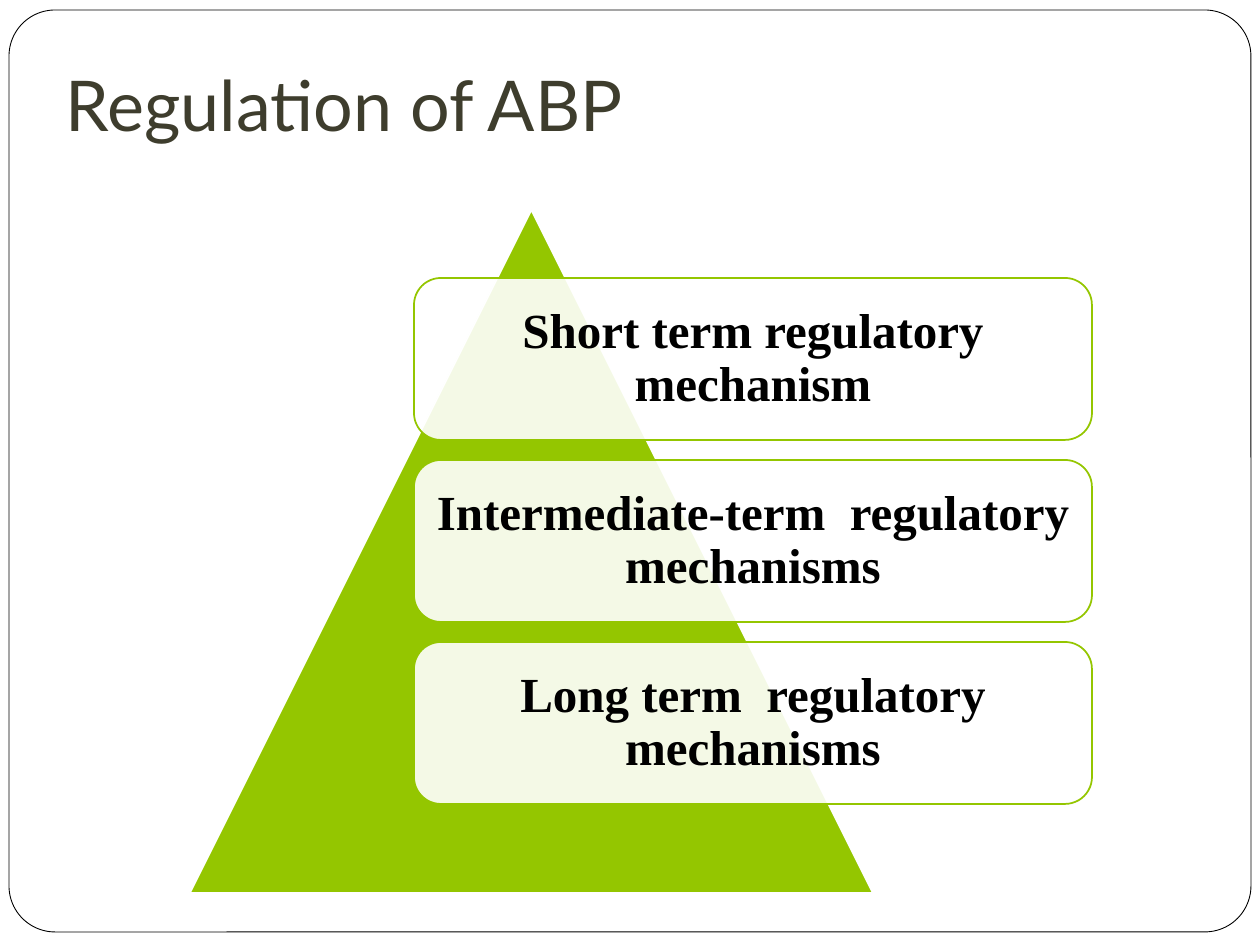
from lxml import etree
from pptx import Presentation
from pptx.dml.color import RGBColor
from pptx.enum.shapes import MSO_SHAPE
from pptx.enum.text import MSO_ANCHOR, PP_ALIGN
from pptx.oxml.ns import qn
from pptx.util import Pt

ROUNDED = MSO_SHAPE.ROUNDED_RECTANGLE
TRIANGLE = MSO_SHAPE.ISOSCELES_TRIANGLE
MIDDLE, BOTTOM = MSO_ANCHOR.MIDDLE, MSO_ANCHOR.BOTTOM
LEFT, CENTER = PP_ALIGN.LEFT, PP_ALIGN.CENTER

PX = 914400 / 126
COLORS = {"white": "FFFFFF", "black": "000000", "green": "94C600", "title": "3E3D2D"}
MECHANISMS = [
    "Short term regulatory mechanism",
    "Intermediate-term  regulatory mechanisms",
    "Long term  regulatory mechanisms",
]
CARD_TOP, CARD_PITCH = 278, 182


def add_outlined(kind, box, fill, line, weight):
    shape = slide.shapes.add_shape(kind, *(round(v * PX) for v in box))
    shape.shadow.inherit = False
    shape.fill.solid()
    shape.fill.fore_color.rgb = RGBColor.from_string(COLORS[fill])
    shape.line.color.rgb = RGBColor.from_string(COLORS[line])
    shape.line.width = Pt(weight)
    return shape


def write(shape, text, insets, anchor, align, font_name, size, color, bold):
    """Fill the shape with one paragraph; insets are left, top, right, bottom px."""
    frame = shape.text_frame
    frame.word_wrap = True
    frame.vertical_anchor = anchor
    (frame.margin_left, frame.margin_top,
     frame.margin_right, frame.margin_bottom) = (round(v * PX) for v in insets)
    paragraph = frame.paragraphs[0]
    paragraph.alignment = align
    run = paragraph.add_run()
    run.text = text
    run.font.name = font_name
    run.font.size = Pt(size)
    run.font.bold = bold
    run.font.color.rgb = RGBColor.from_string(COLORS[color])
    return paragraph


prs = Presentation()
prs.slide_width = round(1260 * PX)
prs.slide_height = round(945 * PX)
slide = prs.slides.add_slide(prs.slide_layouts[6])

border = add_outlined(ROUNDED, (9, 10, 1242, 922), "white", "black", 0.5)
border.adjustments[0] = 0.05

add_outlined(TRIANGLE, (190, 210, 683, 683), "green", "white", 1)

for row, mechanism in enumerate(MECHANISMS):
    card = add_outlined(ROUNDED, (414, CARD_TOP + row * CARD_PITCH, 678, 162),
                        "white", "green", 1)
    fill_color = card.fill._xPr.find(qn("a:solidFill"))[0]
    etree.SubElement(fill_color, qn("a:alpha"), val="90000")
    label = write(card, mechanism, (15, 15, 15, 15), MIDDLE, CENTER,
                  "Times New Roman", 28, "black", True)
    label.line_spacing = 0.9

title = slide.shapes.add_textbox(*(round(v * PX) for v in (53, 38, 1144, 120)))
write(title, "Regulation of ABP", (13, 6, 13, 13), BOTTOM, LEFT,
      "Lato", 40, "title", False)

prs.save("out.pptx")
